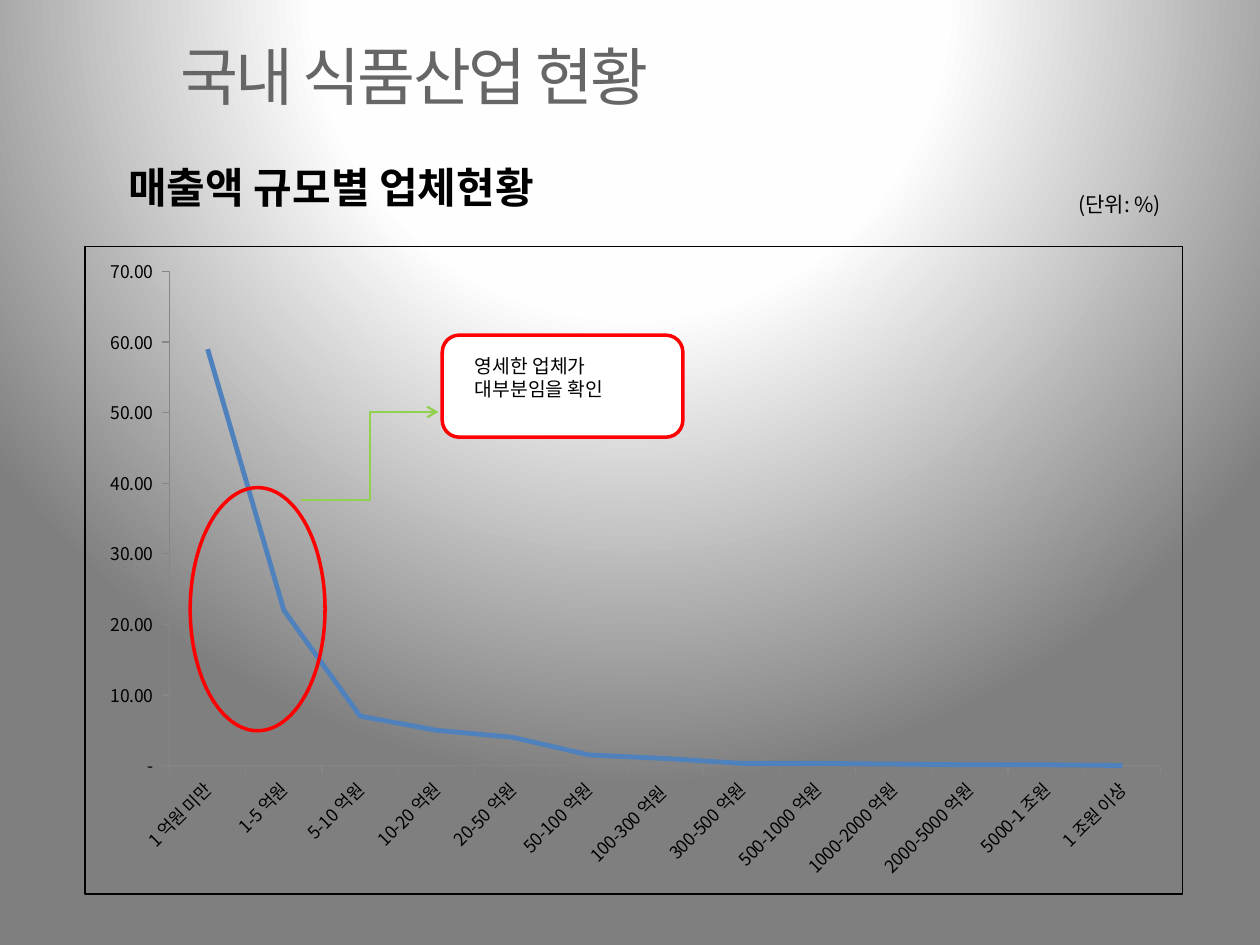
import pptx
import pptx.chart.data
import pptx.dml.color
import pptx.enum.chart
import pptx.enum.shapes
import pptx.enum.text
import pptx.oxml
import pptx.oxml.ns
import pptx.util
from lxml import etree

Inches = pptx.util.Inches
Pt = pptx.util.Pt
qn = pptx.oxml.ns.qn

FONT = "Noto Sans CJK KR"
COLORS = {
    "title": "666666", "text": "000000", "line": "4F81BD", "axis": "868686",
    "mark": "FF0000", "arrow": "92D050", "box": "FFFFFF",
}
BACKGROUND_STOPS = [(0, "FFFFFF"), (40, "FEFEFE"), (100, "7F7F7F")]
SALES = [
    ("1 억원 미만", 59), ("1-5 억원", 22), ("5-10 억원", 7), ("10-20 억원", 5),
    ("20-50 억원", 4), ("50-100 억원", 1.5), ("100-300 억원 ", 1),
    ("300-500 억원", 0.3), ("500-1000 억원", 0.3), ("1000-2000 억원", 0.2),
    ("2000-5000 억원", 0.1), ("5000-1 조원", 0.1), ("1 조원 이상", 0),
]


def rgb(name):
    return pptx.dml.color.RGBColor.from_string(COLORS[name])


def xml(tag, body):
    spaces = pptx.oxml.ns.nsdecls("a", "c")
    return pptx.oxml.parse_xml(f"<{tag} {spaces}>{body}</{tag}>")


class SlideBuilder:
    def __init__(self, page):
        self.page = page

    def background(self, stops):
        self.page.background.fill.solid()
        solid = next(self.page.element.iter(qn("a:solidFill")))
        marks = "".join(f'<a:gs pos="{position * 1000}"><a:srgbClr val="{color}"/></a:gs>'
                        for position, color in stops)
        gradient = xml("a:gradFill", f'<a:gsLst>{marks}</a:gsLst><a:path path="circle">'
                       '<a:fillToRect l="50000" t="-80000" r="50000" b="180000"/></a:path>')
        solid.getparent().replace(solid, gradient)

    def fill_text(self, frame, text, size, color="text", bold=False, spacing=0):
        frame.word_wrap = True
        para = frame.paragraphs[0]
        para.text = text
        para.alignment = pptx.enum.text.PP_ALIGN.LEFT
        font = para.font
        font.name, font.size, font.bold = FONT, Pt(size), bold
        font.color.rgb = rgb(color)
        style = para._p.pPr.find(qn("a:defRPr"))
        etree.SubElement(style, qn("a:ea")).set("typeface", FONT)
        if spacing:
            style.set("spc", str(int(spacing * 100)))

    def title(self, text, left, top, width, height):
        box = self.page.shapes.title
        box.left, box.top = Inches(left), Inches(top)
        box.width, box.height = Inches(width), Inches(height)
        box.text_frame.vertical_anchor = pptx.enum.text.MSO_ANCHOR.MIDDLE
        self.fill_text(box.text_frame, text, 36, "title", spacing=-1.5)

    def text(self, text, left, top, width, height, size, bold=False):
        box = self.page.shapes.add_textbox(
            Inches(left), Inches(top), Inches(width), Inches(height))
        self.fill_text(box.text_frame, text, size, bold=bold)

    def outline(self, kind, left, top, width, height, fill=None):
        shape = self.page.shapes.add_shape(
            kind, Inches(left), Inches(top), Inches(width), Inches(height))
        shape.shadow.inherit = False
        if fill:
            shape.fill.solid()
            shape.fill.fore_color.rgb = rgb(fill)
        else:
            shape.fill.background()
        shape.line.color.rgb = rgb("mark")
        shape.line.width = Pt(2)

    def elbow_arrow(self, start, end):
        arrow = self.page.shapes.add_connector(
            pptx.enum.shapes.MSO_CONNECTOR.ELBOW, *map(Inches, start + end))
        arrow.line.color.rgb = rgb("arrow")
        arrow.line.width = Pt(1.25)
        properties = arrow._element.spPr
        tail = etree.SubElement(properties.find(qn("a:ln")), qn("a:tailEnd"))
        tail.set("type", "arrow")
        etree.SubElement(properties, qn("a:effectLst"))

    def line_chart(self, rows, left, top, width, height):
        data = pptx.chart.data.CategoryChartData()
        data.categories = [label for label, share in rows]
        data.add_series("Series 1", [share for label, share in rows])
        chart = self.page.shapes.add_chart(
            pptx.enum.chart.XL_CHART_TYPE.LINE, Inches(left), Inches(top),
            Inches(width), Inches(height), data).chart
        chart.has_title = chart.has_legend = False
        chart.font.name, chart.font.size = FONT, Pt(10)
        chart.font.color.rgb = rgb("text")
        chart.plots[0].vary_by_categories = False
        series = chart.plots[0].series[0]
        series.smooth = False
        series.format.line.color.rgb = rgb("line")
        series.format.line.width = Pt(2.75)

        # Axes
        for axis in (chart.category_axis, chart.value_axis):
            axis.has_major_gridlines = False
            axis.major_tick_mark = pptx.enum.chart.XL_TICK_MARK.OUTSIDE
            axis.format.line.color.rgb = rgb("axis")
            axis.tick_labels.font.size = Pt(10)
        values = chart.value_axis
        values.minimum_scale, values.maximum_scale, values.major_unit = 0, 70, 10
        values.tick_labels.number_format = (
            '_-* #,##0.00_-;\\-* #,##0.00_-;_-* "-"_-;_-@_-')
        values.tick_labels.number_format_is_linked = False
        labels = chart.category_axis._element.find(qn("c:txPr"))
        labels.find(qn("a:bodyPr")).set("rot", "-2700000")

        # Plot position and frame
        space = chart._chartSpace
        plot = next(space.iter(qn("c:plotArea")))
        for layout in plot.findall(qn("c:layout")):
            plot.remove(layout)
        sizes = "".join(f'<c:{key} val="{part}"/>' for key, part in
                        [("x", 0.077), ("y", 0.039), ("w", 0.903), ("h", 0.763)])
        plot.insert(0, xml("c:layout", '<c:manualLayout><c:layoutTarget val="inner"/>'
                           '<c:xMode val="edge"/><c:yMode val="edge"/>'
                           f'{sizes}</c:manualLayout>'))
        space.find(qn("c:chart")).addnext(xml(
            "c:spPr", '<a:noFill/><a:ln w="9525"><a:solidFill>'
            f'<a:srgbClr val="{COLORS["text"]}"/></a:solidFill></a:ln>'))


def main():
    deck = pptx.Presentation()
    deck.slide_width, deck.slide_height = Inches(10), Inches(7.5)
    builder = SlideBuilder(deck.slides.add_slide(deck.slide_layouts[5]))
    shapes = pptx.enum.shapes.MSO_SHAPE

    # Background and headings
    builder.background(BACKGROUND_STOPS)
    builder.title("국내 식품산업 현황", 1.33, 0.16, 8.67, 0.87)

    # Sales chart and unit
    builder.line_chart(SALES, 0.67, 1.95, 8.72, 5.15)
    builder.text("(단위: %)", 8.46, 1.47, 1.82, 0.39, 12)

    # Highlight and callout
    builder.outline(shapes.OVAL, 1.51, 3.87, 1.07, 1.93)
    builder.elbow_arrow((2.39, 3.97), (3.48, 3.27))
    builder.outline(shapes.ROUNDED_RECTANGLE, 3.51, 2.66, 1.91, 0.81, fill="box")
    builder.text("영세한 업체가 대부분임을 확인", 3.67, 2.76, 1.63, 0.61, 11)

    builder.text("매출액 규모별 업체현황", 0.92, 1.23, 8.91, 0.5, 24, bold=True)
    deck.save("out.pptx")


if __name__ == "__main__":
    main()
